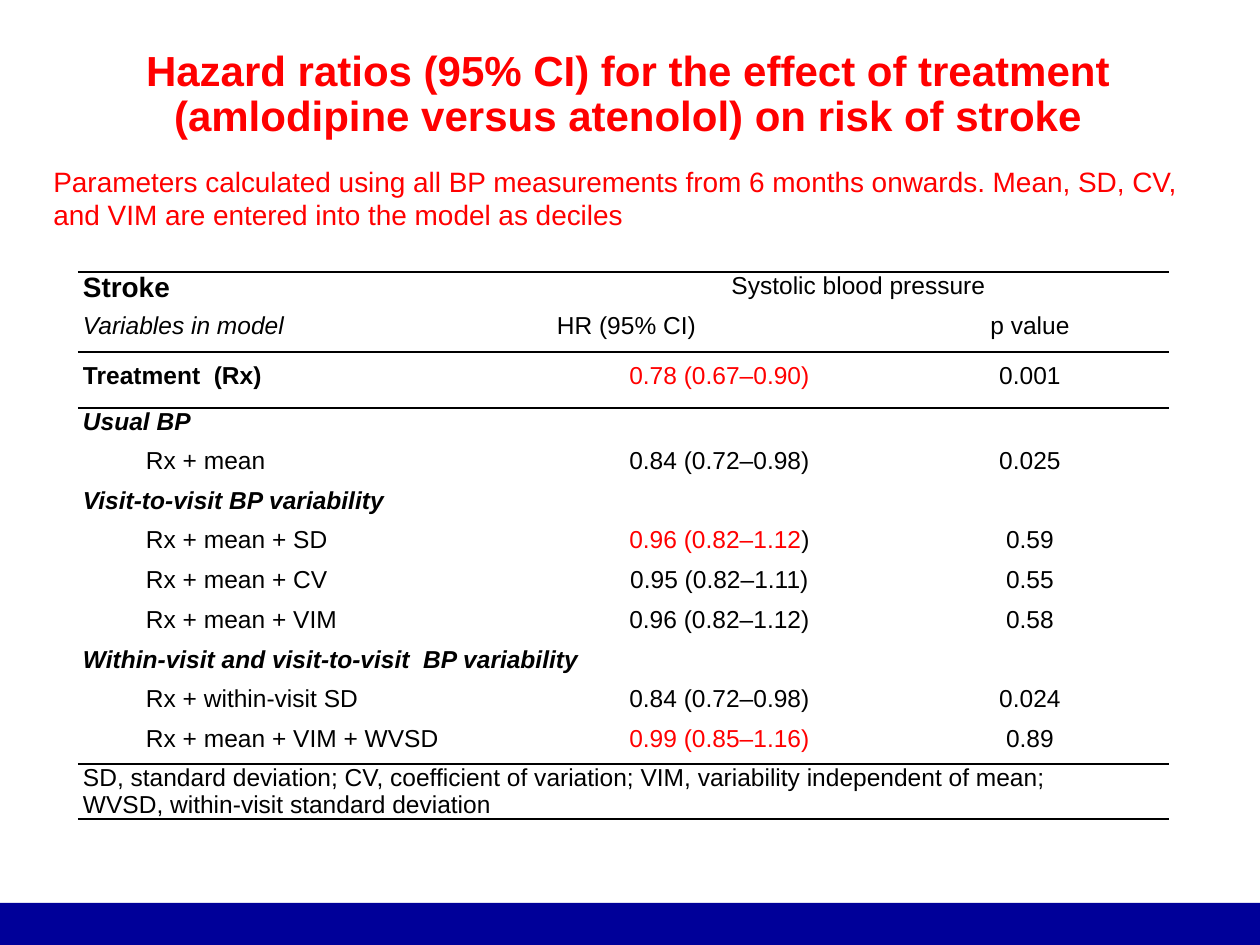
from lxml.etree import SubElement
from pptx import Presentation
from pptx.dml.color import RGBColor
from pptx.enum.shapes import MSO_SHAPE
from pptx.enum.text import MSO_ANCHOR, PP_ALIGN
from pptx.oxml import parse_xml
from pptx.oxml.ns import nsdecls, qn
from pptx.util import Pt

PX = 7257
FONT = "Arial"
BLACK = RGBColor(0, 0, 0)
RED = RGBColor(255, 0, 0)
NAVY = RGBColor(0, 0, 153)
NO_STYLE = "{2D5ABB26-0587-4C30-8999-92F81FD0307C}"

COLUMN_WIDTHS = [470, 343, 278]
ROW_HEIGHTS = [40, 40, 56, 39, 40, 39, 40, 40, 40, 39, 40, 39, 55]
RULED_ROWS = [1, 11, 12]
RESULTS = [
    ("Treatment  (Rx)", "0.78 (0.67–0.90)", "0.001"),
    ("Usual BP", "", ""),
    ("Rx + mean", "0.84 (0.72–0.98)", "0.025"),
    ("Visit-to-visit BP variability", "", ""),
    ("Rx + mean + SD", "0.96 (0.82–1.12)", "0.59"),
    ("Rx + mean + CV", "0.95 (0.82–1.11)", "0.55"),
    ("Rx + mean + VIM", "0.96 (0.82–1.12)", "0.58"),
    ("Within-visit and visit-to-visit  BP variability", "", ""),
    ("Rx + within-visit SD", "0.84 (0.72–0.98)", "0.024"),
    ("Rx + mean + VIM + WVSD", "0.99 (0.85–1.16)", "0.89"),
]
RED_MODELS = ["Treatment  (Rx)", "Rx + mean + SD", "Rx + mean + VIM + WVSD"]


def px(*lengths):
    return [length * PX for length in lengths]


def write(frame, text, size=14, color=BLACK, bold=False, italic=False, align=PP_ALIGN.LEFT):
    paragraph = frame.paragraphs[0]
    paragraph.alignment = align
    for index, line in enumerate(text.split("\n")):
        if index:
            paragraph.add_line_break()
        run = paragraph.add_run()
        run.text = line
        run.font.name = FONT
        run.font.size = Pt(size)
        run.font.bold = bold
        run.font.italic = italic
        run.font.color.rgb = color
    return paragraph


def add_heading(slide, box):
    heading = slide.shapes.title
    heading.left, heading.top, heading.width, heading.height = px(*box)
    frame = heading.text_frame
    frame.margin_left = frame.margin_right = frame.margin_top = frame.margin_bottom = 0
    frame.vertical_anchor = MSO_ANCHOR.TOP
    paragraph = write(
        frame,
        "Hazard ratios (95% CI) for the effect of treatment\n"
        "(amlodipine versus atenolol) on risk of stroke",
        size=24, color=RED, bold=True, align=PP_ALIGN.CENTER,
    )
    paragraph.line_spacing = 0.9


def add_method_note(slide, box):
    frame = slide.shapes.add_textbox(*px(*box)).text_frame
    frame.word_wrap = True
    write(
        frame,
        "Parameters calculated using all BP measurements from 6 months onwards. "
        "Mean, SD, CV, and VIM are entered into the model as deciles",
        size=16, color=RED,
    )


def rule_edge(cell, edge):
    rule = parse_xml(f'<a:{edge} {nsdecls("a")} w="12700"/>')
    fill = SubElement(rule, qn("a:solidFill"))
    SubElement(fill, qn("a:srgbClr")).set("val", str(BLACK))
    properties = cell._tc.get_or_add_tcPr()
    properties.insert(len(properties.findall(qn("a:lnT"))), rule)


def write_results(table):
    centre = PP_ALIGN.CENTER
    for row, (model, ratio, p_value) in enumerate(RESULTS, start=2):
        label, hazard, probability = (table.cell(row, column) for column in range(3))
        group = not ratio
        treatment = row == 2
        if not group and not treatment:
            label.margin_left = 68 * PX
        write(label.text_frame, model, bold=group or treatment, italic=group)
        if group:
            continue
        if treatment:
            for cell in (label, hazard, probability):
                cell.margin_top = 10 * PX
        color = RED if model in RED_MODELS else BLACK
        if model == "Rx + mean + SD":
            write(hazard.text_frame, ratio[:-1], color=color, align=centre)
            write(hazard.text_frame, ratio[-1], align=centre)
        else:
            write(hazard.text_frame, ratio, color=color, align=centre)
        write(probability.text_frame, p_value, align=centre)


def add_hazard_table(slide, box):
    table = slide.shapes.add_table(len(ROW_HEIGHTS), len(COLUMN_WIDTHS), *px(*box)).table
    table.first_row = table.horz_banding = False
    table._tbl.tblPr.find(qn("a:tableStyleId")).text = NO_STYLE
    for column, width in zip(table.columns, COLUMN_WIDTHS):
        column.width = width * PX
    for row, height in zip(table.rows, ROW_HEIGHTS):
        row.height = height * PX
    for row in range(len(ROW_HEIGHTS)):
        for column in range(len(COLUMN_WIDTHS)):
            cell = table.cell(row, column)
            cell.margin_left = cell.margin_right = 5 * PX
            cell.margin_top = cell.margin_bottom = 0
            cell.fill.background()
            if row == 0 or row - 1 in RULED_ROWS:
                rule_edge(cell, "lnT")
            if row in RULED_ROWS:
                rule_edge(cell, "lnB")

    last = len(ROW_HEIGHTS) - 1
    for row, first, end in [(0, 1, 2), (5, 0, 1), (9, 0, 1), (last, 0, 2)]:
        table.cell(row, first).merge(table.cell(row, end))

    centre = PP_ALIGN.CENTER
    write(table.cell(0, 0).text_frame, "Stroke", size=16, bold=True)
    write(table.cell(0, 1).text_frame, "Systolic blood pressure", align=centre)
    write(table.cell(1, 0).text_frame, "Variables in model", italic=True)
    table.cell(1, 1).margin_right = 191 * PX
    write(table.cell(1, 1).text_frame, "HR (95% CI)", align=centre)
    write(table.cell(1, 2).text_frame, "p value", align=centre)
    write_results(table)
    write(
        table.cell(last, 0).text_frame,
        "SD, standard deviation; CV, coefficient of variation; "
        "VIM, variability independent of mean;\n"
        "WVSD, within-visit standard deviation",
    )


def add_footer_band(slide, box):
    band = slide.shapes.add_shape(MSO_SHAPE.RECTANGLE, *px(*box))
    band.shadow.inherit = False
    band.fill.solid()
    band.fill.fore_color.rgb = NAVY
    band.line.fill.background()


def main():
    deck = Presentation()
    deck.slide_width, deck.slide_height = px(1260, 945)
    slide = deck.slides.add_slide(deck.slide_layouts[5])
    add_footer_band(slide, (0, 903, 1260, 42))
    add_hazard_table(slide, (78, 272, sum(COLUMN_WIDTHS), sum(ROW_HEIGHTS)))
    add_heading(slide, (30, 50, 1196, 58))
    add_method_note(slide, (41, 158, 1193, 80))
    deck.save("out.pptx")


if __name__ == "__main__":
    main()
